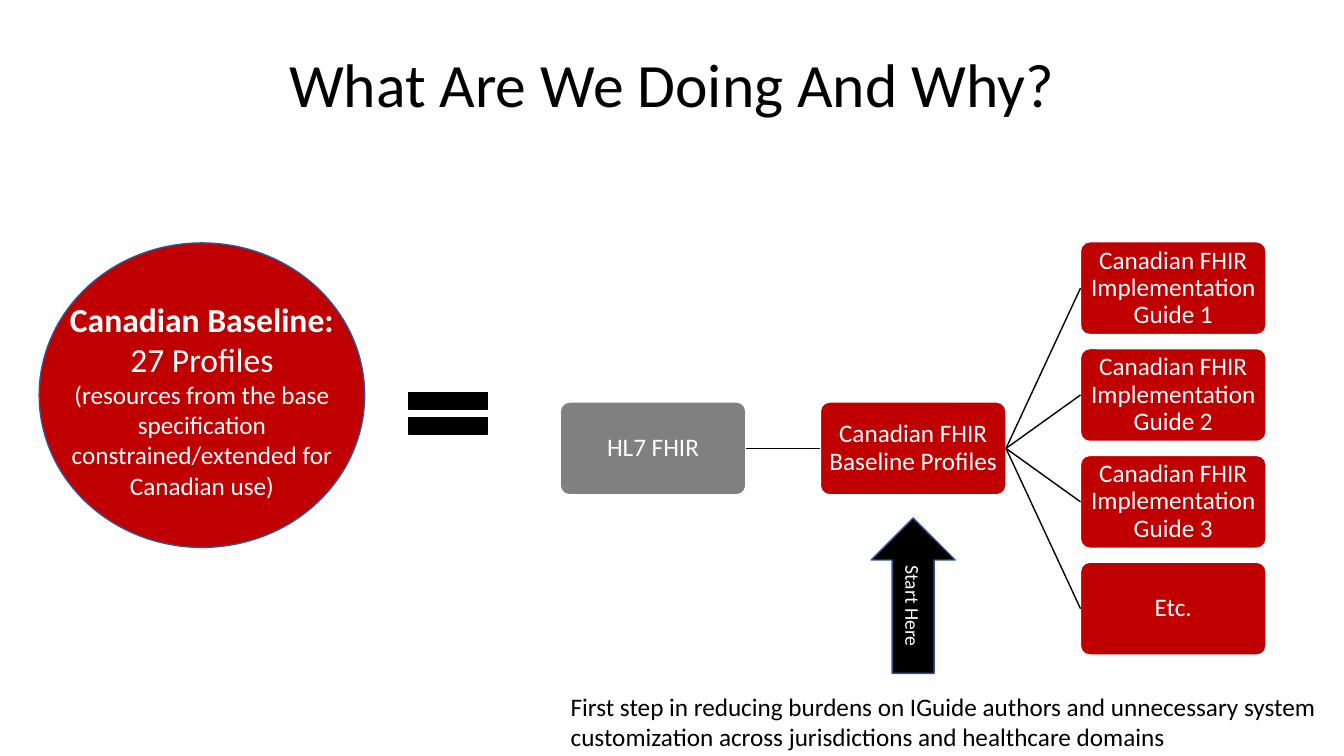
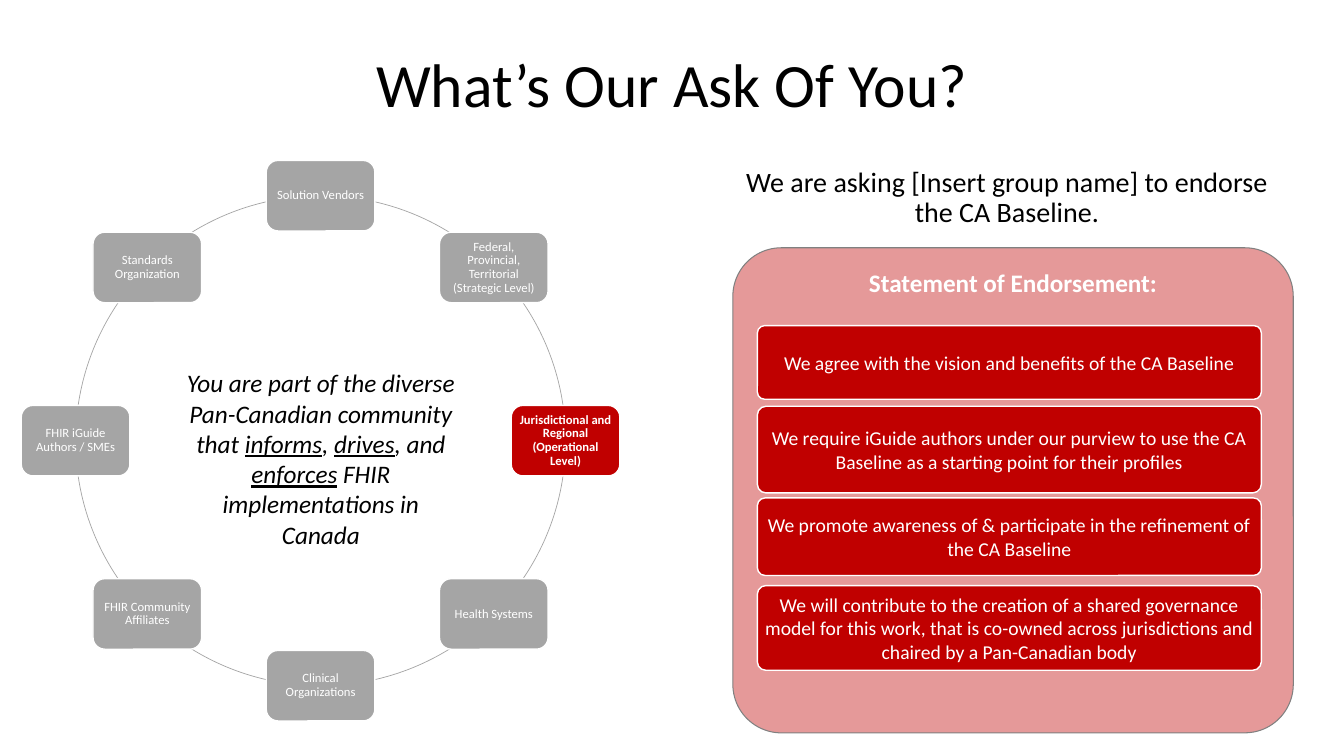
"""Build two slides on a Canadian FHIR baseline and the endorsement it needs."""
from math import cos, pi, sin

from lxml.etree import SubElement
from pptx import Presentation
from pptx.dml.color import RGBColor
from pptx.enum.shapes import MSO_CONNECTOR, MSO_SHAPE
from pptx.enum.text import MSO_ANCHOR, PP_ALIGN
from pptx.oxml.ns import qn
from pptx.util import Pt

FONT = "Calibri"
BLACK = RGBColor(0x00, 0x00, 0x00)
WHITE = RGBColor(0xFF, 0xFF, 0xFF)
RED = RGBColor(0xC0, 0x00, 0x00)
GRAY = RGBColor(0x80, 0x80, 0x80)
SILVER = RGBColor(0xA5, 0xA5, 0xA5)
NAVY = RGBColor(0x32, 0x54, 0x91)


def add_box(page, kind, left, top, width, height, fill, line, weight=1):
    shape = page.shapes.add_shape(kind, Pt(left), Pt(top), Pt(width), Pt(height))
    shape.shadow.inherit = False
    if fill is None:
        shape.fill.background()
    else:
        shape.fill.solid()
        shape.fill.fore_color.rgb = fill
    shape.line.color.rgb = line
    shape.line.width = Pt(weight)
    return shape


def write(shape, lines, color, inset=(7.2, 3.6), spacing=1.0, align=PP_ALIGN.CENTER):
    frame = shape.text_frame
    frame.word_wrap = True
    frame.vertical_anchor = MSO_ANCHOR.MIDDLE
    frame.margin_left = frame.margin_right = Pt(inset[0])
    frame.margin_top = frame.margin_bottom = Pt(inset[1])
    for index, (text, size, bold) in enumerate(lines):
        para = frame.add_paragraph() if index else frame.paragraphs[0]
        para.text = text
        para.alignment = align
        para.line_spacing = spacing
        para.font.name = FONT
        para.font.size = Pt(size)
        para.font.bold = bold
        para.font.color.rgb = color
    return frame


deck = Presentation()
deck.slide_width, deck.slide_height = Pt(960), Pt(540)

pages = []
for heading in ("What Are We Doing And Why?", "What’s Our Ask Of You?"):
    page = deck.slides.add_slide(deck.slide_layouts[5])
    title = page.shapes.title
    title.left, title.top, title.width, title.height = Pt(0), Pt(10), Pt(960), Pt(104.4)
    write(title, [(heading, 44, False)], BLACK, spacing=0.9)
    pages.append(page)
purpose_page, ask_page = pages

STEP_WIDTH, STEP_HEIGHT = 132.6, 66.3
GUIDE_TOP, GUIDE_PITCH = 172.7, 76.3
middle_top = GUIDE_TOP + 1.5 * GUIDE_PITCH
steps = [
    ("HL7 FHIR", 400.2, middle_top, GRAY),
    ("Canadian FHIR Baseline Profiles", 586, middle_top, RED),
]
guides = [f"Canadian FHIR Implementation Guide {number}" for number in (1, 2, 3)] + ["Etc."]
for row, guide in enumerate(guides):
    steps.append((guide, 771.8, GUIDE_TOP + row * GUIDE_PITCH, RED))

step_boxes = []
for text, left, top, fill in steps:
    box = add_box(purpose_page, MSO_SHAPE.ROUNDED_RECTANGLE, left, top,
                  STEP_WIDTH, STEP_HEIGHT, fill, WHITE)
    box.adjustments[0] = 0.1
    write(box, [(text, 18, False)], WHITE, inset=(1, 1), spacing=0.9)
    step_boxes.append(box)

standard_box, baseline_box, *guide_boxes = step_boxes
links = [(standard_box, baseline_box)] + [(baseline_box, box) for box in guide_boxes]
for source, target in links:
    link = purpose_page.shapes.add_connector(MSO_CONNECTOR.STRAIGHT, 0, 0, 0, 0)
    link.begin_connect(source, 3)
    link.end_connect(target, 1)
    link.line.color.rgb = BLACK
    link.line.width = Pt(1)
    SubElement(link.element.spPr, qn("a:effectLst"))

add_box(purpose_page, MSO_SHAPE.FLOWCHART_CONNECTOR, 28, 173.5, 232.5, 217.5, RED, NAVY)
baseline_text = purpose_page.shapes.add_textbox(Pt(39.5), Pt(209), Pt(209.5), Pt(152.5))
write(baseline_text, [
    ("Canadian Baseline:", 24, True),
    ("27 Profiles", 24, False),
    ("(resources from the base specification constrained/extended for Canadian use)", 18, False),
], WHITE)

start_arrow = add_box(purpose_page, MSO_SHAPE.UP_ARROW, 622.3, 370, 60, 111, BLACK, NAVY)
write(start_arrow, [("Start Here", 14, False)], WHITE)
start_arrow.element.txBody.bodyPr.set("vert", "vert")

add_box(purpose_page, MSO_SHAPE.MATH_EQUAL, 281.5, 270, 77, 50.4, BLACK, BLACK)

outcome = purpose_page.shapes.add_textbox(Pt(400.5), Pt(489.6), Pt(547), Pt(51))
write(outcome, [(
    "First step in reducing burdens on IGuide authors and unnecessary system "
    "customization across jurisdictions and healthcare domains", 18, False,
)], BLACK, align=PP_ALIGN.LEFT)

CENTER_X, CENTER_Y, RADIUS = 229, 314.8, 175
NODE_WIDTH, NODE_HEIGHT = 77.6, 50.4
KEY_MEMBER = "Jurisdictional and Regional (Operational Level)"
members = [
    "Solution Vendors",
    "Federal, Provincial, Territorial (Strategic Level)",
    KEY_MEMBER,
    "Health Systems",
    "Clinical Organizations",
    "FHIR Community Affiliates",
    "FHIR iGuide Authors / SMEs",
    "Standards Organization",
]
add_box(ask_page, MSO_SHAPE.OVAL, CENTER_X - RADIUS, CENTER_Y - RADIUS,
        2 * RADIUS, 2 * RADIUS, None, SILVER, 0.5)
for index, member in enumerate(members):
    angle = 2 * pi * index / len(members)
    is_key = member == KEY_MEMBER
    node = add_box(ask_page, MSO_SHAPE.ROUNDED_RECTANGLE,
                   CENTER_X + RADIUS * sin(angle) - NODE_WIDTH / 2,
                   CENTER_Y - RADIUS * cos(angle) - NODE_HEIGHT / 2,
                   NODE_WIDTH, NODE_HEIGHT, RED if is_key else SILVER, WHITE)
    write(node, [(member, 9, is_key)], WHITE, inset=(3, 2), spacing=0.9)

community = ask_page.shapes.add_textbox(Pt(125.5), Pt(258.5), Pt(207.5), Pt(138))
frame = write(community, [("", 18, False)], BLACK)
para = frame.paragraphs[0]
para.font.italic = True
for text, underlined in (
    ("You are part of the diverse Pan-Canadian community that ", False),
    ("informs", True),
    (", ", False),
    ("drives", True),
    (", and ", False),
    ("enforces", True),
    (" FHIR implementations in Canada", False),
):
    span = para.add_run()
    span.text = text
    span.font.underline = underlined

request = ask_page.shapes.add_textbox(Pt(519), Pt(116), Pt(400.5), Pt(52))
write(request, [("We are asking [Insert group name] to endorse the CA Baseline.", 20, False)],
      BLACK, inset=(10.8, 10.8), spacing=0.9)

panel = add_box(ask_page, MSO_SHAPE.ROUNDED_RECTANGLE, 523.5, 177, 400.3, 346.5, RED, GRAY, 0.75)
panel.adjustments[0] = 0.1
panel_color = panel.element.spPr.find(qn("a:solidFill")).find(qn("a:srgbClr"))
SubElement(panel_color, qn("a:alpha")).set("val", "40000")
frame = write(panel, [("Statement of Endorsement:", 18, True)], WHITE, inset=(1, 6), spacing=0.9)
frame.vertical_anchor = MSO_ANCHOR.TOP

for text, top, height in (
    ("We agree with the vision and benefits of the CA Baseline", 232.6, 52.6),
    ("We require iGuide authors under our purview to use the CA Baseline "
     "as a starting point for their profiles", 290.2, 61.9),
    ("We promote awareness of & participate in the refinement of the CA Baseline", 355.7, 55.4),
    ("We will contribute to the creation of a shared governance model for this work, "
     "that is co-owned across jurisdictions and chaired by a Pan-Canadian body", 418.3, 60.5),
):
    statement = add_box(ask_page, MSO_SHAPE.ROUNDED_RECTANGLE, 541, top, 360, height, RED, WHITE)
    statement.adjustments[0] = 0.1
    write(statement, [(text, 14, False)], WHITE, inset=(2, 1.5))

deck.save("out.pptx")
